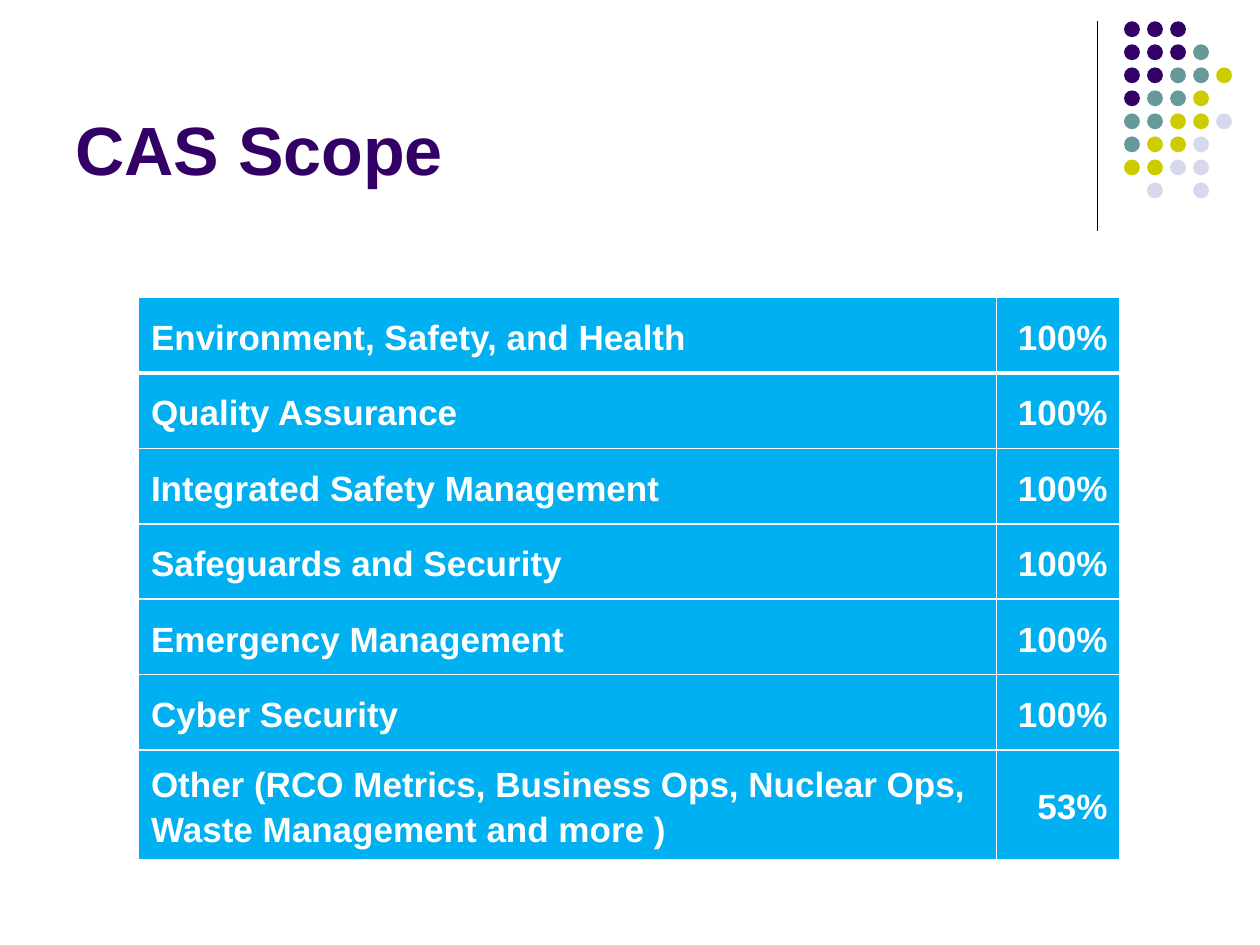
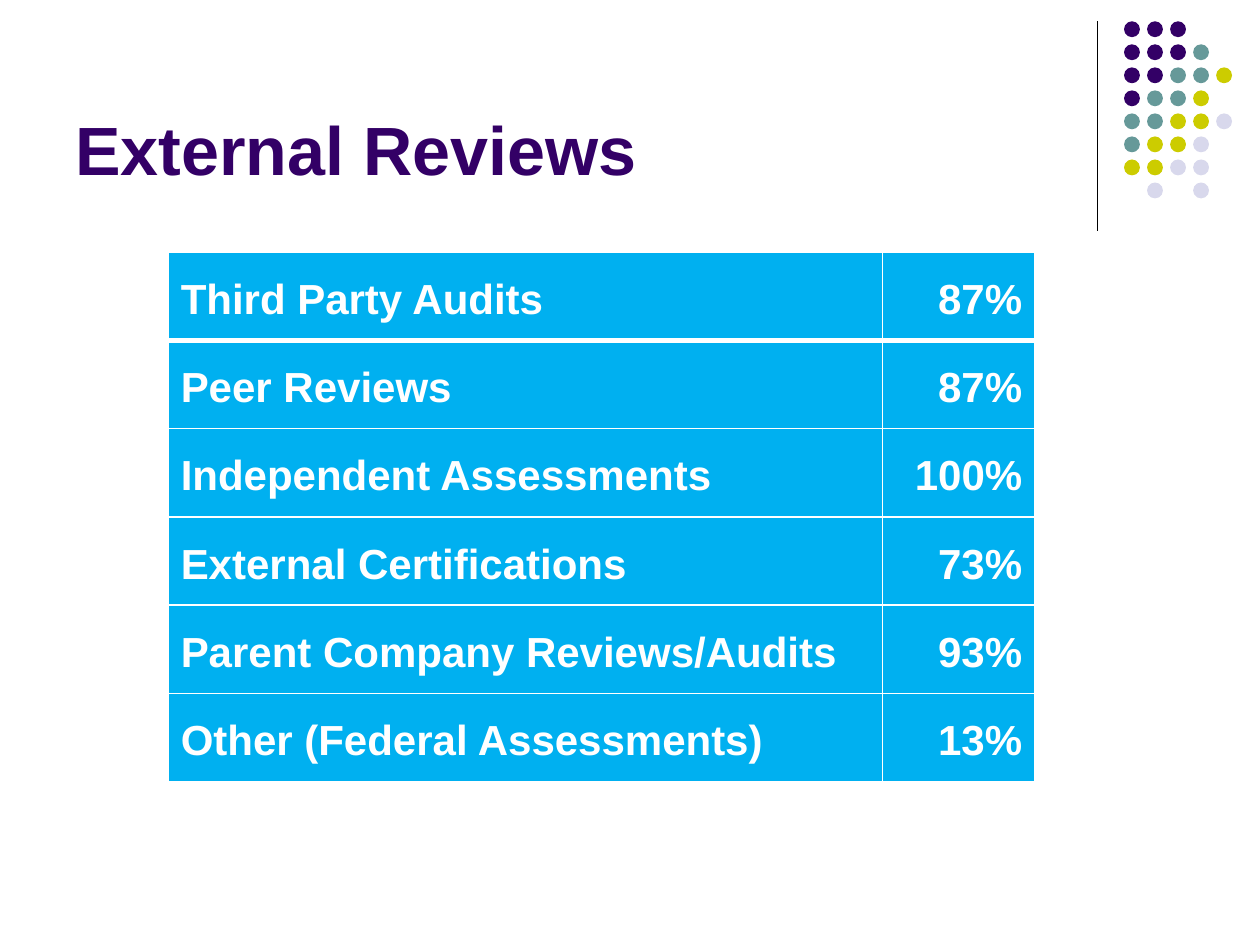
import pptx
import pptx.dml.color
import pptx.enum.shapes
import pptx.enum.text
import pptx.oxml.ns
import pptx.util
from lxml import etree
from pptx.util import Cm

COLORS = {
    "purple": "330066",
    "teal": "669999",
    "olive": "CCCC00",
    "lilac": "D8D8EC",
    "blue": "00B0F0",
    "white": "FFFFFF",
    "black": "000000",
}
FONT = "Arial"

# One letter per dot, a space where the grid is empty
DOT_ROWS = ["PPP", "PPPT", "PPTTO", "PTTO", "TTOOL", "TOOL", "OOLL", " L L"]
DOT_COLORS = {"P": "purple", "T": "teal", "O": "olive", "L": "lilac"}
DOT_LEFT, DOT_TOP, DOT_SIZE = 22.66, 0.43, 0.32
DOT_PITCH = 3.25 / 7

SCOPE_ROWS = [
    ("Environment, Safety, and Health", "100%"),
    ("Quality Assurance", "100%"),
    ("Integrated Safety Management", "100%"),
    ("Safeguards and Security", "100%"),
    ("Emergency Management", "100%"),
    ("Cyber Security", "100%"),
    ("Other (RCO Metrics, Business Ops, Nuclear Ops, "
     "Waste Management and more )", "53%"),
]
REVIEW_ROWS = [
    ("Third Party Audits", "87%"),
    ("Peer Reviews", "87%"),
    ("Independent Assessments", "100%"),
    ("External Certifications", "73%"),
    ("Parent Company Reviews/Audits", "93%"),
    ("Other (Federal Assessments)", "13%"),
]


def rgb(name):
    return pptx.dml.color.RGBColor.from_string(COLORS[name])


class Deck:
    """Holds the shared style and the slide being filled."""

    def __init__(self):
        self.presentation = pptx.Presentation()
        self.presentation.slide_width = Cm(25.4)
        self.presentation.slide_height = Cm(19.05)
        self.slide = None

    def new_slide(self, title):
        blank_layout = self.presentation.slide_layouts[6]
        self.slide = self.presentation.slides.add_slide(blank_layout)
        self.rule()
        self.dots()
        self.title(title)

    def rule(self):
        connector = self.slide.shapes.add_connector(
            pptx.enum.shapes.MSO_CONNECTOR.STRAIGHT,
            Cm(22.12), Cm(0.43), Cm(22.12), Cm(4.65))
        connector.line.color.rgb = rgb("black")
        connector.line.width = pptx.util.Pt(0.75)
        etree.SubElement(connector._element.spPr,
                         pptx.oxml.ns.qn("a:effectLst"))

    def dots(self):
        for row, letters in enumerate(DOT_ROWS):
            for column, letter in enumerate(letters):
                if letter != " ":
                    self.dot(DOT_LEFT + column * DOT_PITCH,
                             DOT_TOP + row * DOT_PITCH, DOT_COLORS[letter])

    def dot(self, left, top, color):
        shape = self.slide.shapes.add_shape(
            pptx.enum.shapes.MSO_SHAPE.OVAL,
            Cm(left), Cm(top), Cm(DOT_SIZE), Cm(DOT_SIZE))
        shape.shadow.inherit = False
        shape.fill.solid()
        shape.fill.fore_color.rgb = rgb(color)
        shape.line.fill.background()

    def title(self, text):
        shape = self.slide.shapes.add_textbox(
            Cm(1.27), Cm(0.33), Cm(20.95), Cm(3.6))
        text_frame = shape.text_frame
        text_frame.word_wrap = True
        text_frame.vertical_anchor = pptx.enum.text.MSO_ANCHOR.BOTTOM
        text_frame.text = text
        self.format_runs(text_frame.paragraphs[0], 39, "purple")

    def format_runs(self, paragraph, size, color):
        for run in paragraph.runs:
            run.font.name = FONT
            run.font.size = pptx.util.Pt(size)
            run.font.bold = True
            run.font.color.rgb = rgb(color)

    def table(self, rows, left, top, column_widths, row_heights, size):
        table = self.slide.shapes.add_table(
            len(rows), len(column_widths), Cm(left), Cm(top),
            Cm(sum(column_widths)), Cm(sum(row_heights))).table
        for column, width in zip(table.columns, column_widths):
            column.width = Cm(width)
        for row, height in zip(table.rows, row_heights):
            row.height = Cm(height)
        for row_index, texts in enumerate(rows):
            # A heavier line separates the first two rows
            top_width = 3 if row_index == 1 else 1
            bottom_width = 3 if row_index == 0 else 1
            for column_index, text in enumerate(texts):
                cell = table.cell(row_index, column_index)
                self.borders(cell, top_width, bottom_width)
                self.fill_cell(cell, text, size, column_index == 1)

    def borders(self, cell, top_width, bottom_width):
        qn = pptx.oxml.ns.qn
        properties = cell._tc.get_or_add_tcPr()
        widths = {"L": 1, "R": 1, "T": top_width, "B": bottom_width}
        for side, width in widths.items():
            line = etree.SubElement(properties, qn("a:ln" + side),
                                    w=str(pptx.util.Pt(width)))
            fill = etree.SubElement(line, qn("a:solidFill"))
            etree.SubElement(fill, qn("a:srgbClr"), val=COLORS["white"])

    def fill_cell(self, cell, text, size, align_right):
        cell.fill.solid()
        cell.fill.fore_color.rgb = rgb("blue")
        cell.vertical_anchor = pptx.enum.text.MSO_ANCHOR.MIDDLE
        cell.text_frame.text = text
        paragraph = cell.text_frame.paragraphs[0]
        paragraph.line_spacing = 1.15
        if align_right:
            paragraph.alignment = pptx.enum.text.PP_ALIGN.RIGHT
        self.format_runs(paragraph, size, "white")


def main():
    deck = Deck()

    # Scope
    deck.new_slide("CAS Scope")
    deck.table(SCOPE_ROWS, 2.79, 6, (17.3, 2.49), [1.52] * 6 + [1.8], 20)

    # External reviews
    deck.new_slide("External Reviews")
    deck.table(REVIEW_ROWS, 3.39, 5.08, (14.4, 3.07), [1.78] * 6, 24)

    deck.presentation.save("out.pptx")


if __name__ == "__main__":
    main()
